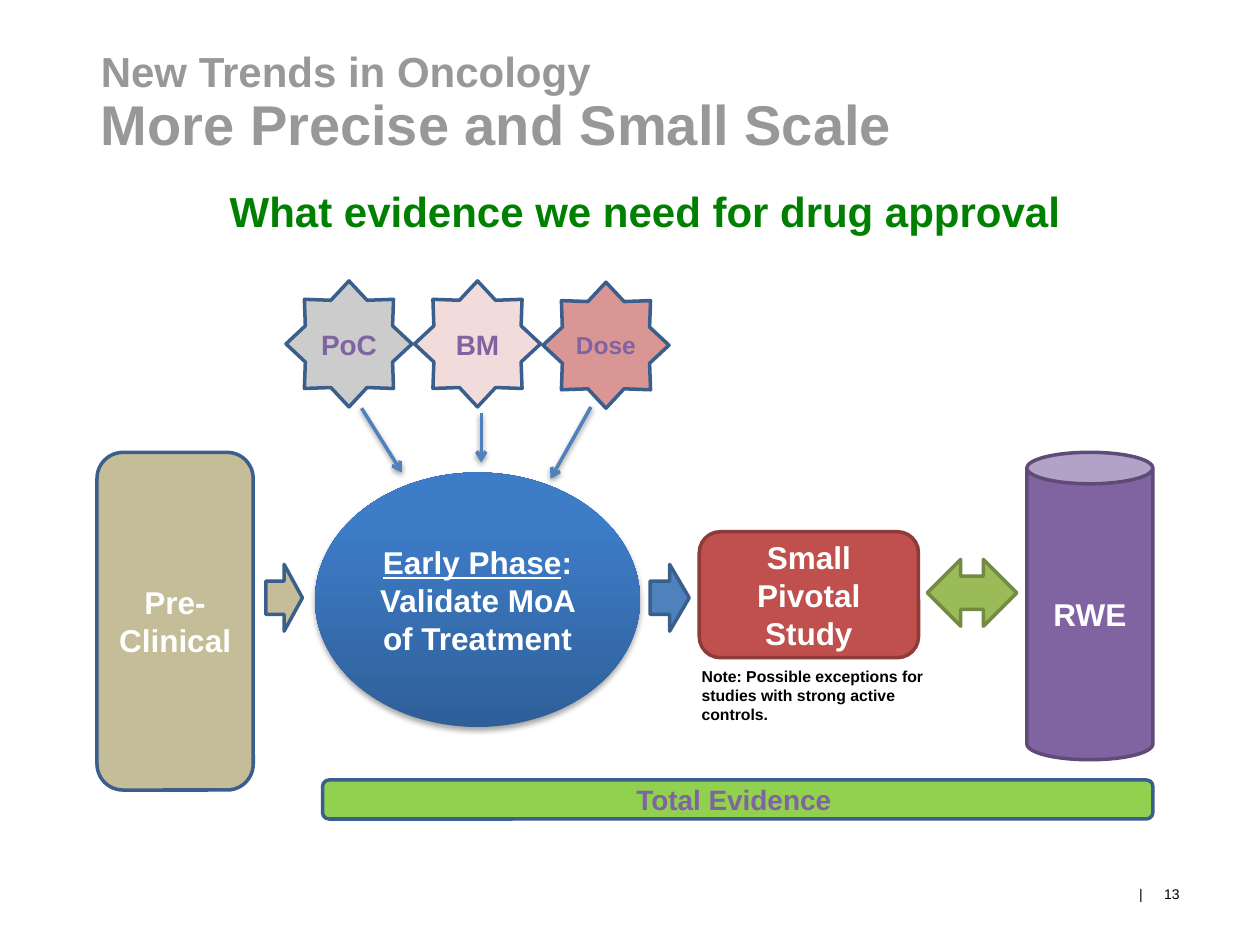
from lxml.etree import SubElement
from pptx import Presentation
from pptx.dml.color import RGBColor
from pptx.enum.shapes import MSO_CONNECTOR, MSO_SHAPE
from pptx.enum.text import MSO_ANCHOR, PP_ALIGN
from pptx.oxml.ns import qn
from pptx.util import Inches, Pt

NAVY = "3A5F8C"
PURPLE = "8064A2"
WHITE = "FFFFFF"
TAN = "C4BD97"
BLUE = "4F81BD"


def rgb(value):
    return RGBColor.from_string(value)


def set_font(font, size, color, bold=True):
    font.name = "Arial"
    font.size = Pt(size)
    font.bold = bold
    font.color.rgb = rgb(color)


def set_insets(tf, left=0.0):
    tf.margin_left = Inches(left)
    tf.margin_top = tf.margin_right = tf.margin_bottom = 0


def add_shadow(sp, alpha, dist):
    props = sp._element.spPr
    for old in props.findall(qn("a:effectLst")):
        props.remove(old)
    effects = SubElement(props, qn("a:effectLst"))
    shadow = SubElement(effects, qn("a:outerShdw"), blurRad=str(Pt(3.1)),
                        dist=str(Pt(dist)), dir="5400000", rotWithShape="0")
    color = SubElement(shadow, qn("a:srgbClr"), val="000000")
    SubElement(color, qn("a:alpha"), val=str(alpha * 1000))


def add_title(s):
    title = s.shapes.title
    title.left, title.top = Inches(0.7), Inches(0.36)
    title.width, title.height = Inches(9.18), Inches(0.87)
    tf = title.text_frame
    tf.vertical_anchor = MSO_ANCHOR.TOP
    p = tf.paragraphs[0]
    p.alignment = PP_ALIGN.LEFT
    p.line_spacing = 0.9
    r = p.add_run()
    r.text = "New Trends in Oncology"
    set_font(r.font, 24, "989898")
    p.add_line_break()
    r = p.add_run()
    r.text = "More Precise and Small Scale"
    set_font(r.font, 32, "989898")


def add_text(s, box, lines, size, color, bold=True, align=PP_ALIGN.LEFT, wrap=True):
    sp = s.shapes.add_textbox(*map(Inches, box))
    tf = sp.text_frame
    tf.word_wrap = wrap
    for i, line in enumerate(lines):
        p = tf.add_paragraph() if i else tf.paragraphs[0]
        p.text = line
        p.alignment = align
        set_font(p.font, size, color, bold)
    return tf


def add_page_number(s):
    tf = add_text(s, (8.84, 7.03, 0.53, 0.26), [""], 8, "000000", bold=False)
    set_insets(tf, 0.2)
    p = tf.paragraphs[0]
    p.text = "|\t13"
    tabs = SubElement(p._p.get_or_add_pPr(), qn("a:tabLst"))
    SubElement(tabs, qn("a:tab"), pos=str(Inches(0.2)), algn="l")
    set_font(p.font, 8, "000000", bold=False)


def add_shape(s, kind, box, fill=None, line=None, text="", size=18, color=WHITE):
    sp = s.shapes.add_shape(kind, *map(Inches, box))
    sp.shadow.inherit = False
    if fill:
        sp.fill.solid()
        sp.fill.fore_color.rgb = rgb(fill)
    if line:
        sp.line.color.rgb = rgb(line)
        sp.line.width = Pt(2)
    else:
        sp.line.fill.background()
    if text:
        tf = sp.text_frame
        tf.word_wrap = True
        tf.vertical_anchor = MSO_ANCHOR.MIDDLE
        p = tf.paragraphs[0]
        p.text = text
        p.alignment = PP_ALIGN.CENTER
        set_font(p.font, size, color)
    return sp


def add_early_phase(s):
    sp = add_shape(s, MSO_SHAPE.OVAL, (2.5, 3.75, 2.58, 2.02), text="Early Phase")
    sp.fill.gradient()
    sp.fill.gradient_angle = 90
    for stop, position, color in zip(sp.fill.gradient_stops, (0, 0.8), ("2F5F99", "3D7CC7")):
        stop.position = position
        stop.color.rgb = rgb(color)
    p = sp.text_frame.paragraphs[0]
    p.runs[0].font.underline = True
    r = p.add_run()
    r.text = ": Validate MoA of Treatment"
    add_shadow(sp, 35, 1.8)


def add_arrow(s, start, end):
    cn = s.shapes.add_connector(MSO_CONNECTOR.STRAIGHT, *map(Inches, start + end))
    cn.line.color.rgb = rgb(BLUE)
    cn.line.width = Pt(2)
    SubElement(cn.line._get_or_add_ln(), qn("a:tailEnd"), type="arrow")
    add_shadow(cn, 38, 1.6)


def main():
    prs = Presentation()
    prs.slide_width, prs.slide_height = Inches(10), Inches(7.5)
    s = prs.slides.add_slide(prs.slide_layouts[5])

    add_title(s)
    subtitle = add_text(s, (0.67, 1.47, 8.9, 0.47), ["What evidence we need for drug approval"],
                        24, "008000", align=PP_ALIGN.CENTER)
    set_insets(subtitle)
    add_page_number(s)

    add_early_phase(s)
    add_shape(s, MSO_SHAPE.RIGHT_ARROW, (5.16, 4.48, 0.31, 0.53), BLUE, NAVY)
    add_shape(s, MSO_SHAPE.ROUNDED_RECTANGLE, (5.55, 4.22, 1.74, 1), "C0504D", "8E3B39",
              "Small Pivotal Study")
    add_shape(s, MSO_SHAPE.CAN, (8.15, 3.59, 1, 2.44), PURPLE, "5F4A78", "RWE")
    add_shape(s, MSO_SHAPE.LEFT_RIGHT_ARROW, (7.36, 4.44, 0.71, 0.53), "9BBB59", "738A42")
    add_shape(s, MSO_SHAPE.ROUNDED_RECTANGLE, (0.77, 3.59, 1.24, 2.68), TAN, NAVY, "Pre-Clinical")
    add_shape(s, MSO_SHAPE.RIGHT_ARROW, (2.11, 4.48, 0.29, 0.53), TAN, NAVY)

    stars = (("PoC", 2.23, "CCCCCC", 16), ("BM", 2.23, "F2DCDB", 16), ("Dose", 2.24, "D99694", 14))
    for i, (text, top, fill, size) in enumerate(stars):
        add_shape(s, MSO_SHAPE.STAR_8_POINT, (2.27 + 1.02 * i, top, 1, 1),
                  fill, NAVY, text, size, PURPLE)

    for start, end in (((2.87, 3.24), (3.19, 3.75)),
                       ((3.82, 3.28), (3.82, 3.67)),
                       ((4.69, 3.23), (4.37, 3.8))):
        add_arrow(s, start, end)

    add_shape(s, MSO_SHAPE.ROUNDED_RECTANGLE, (2.56, 6.19, 6.59, 0.31), "92D050", NAVY,
              "Total Evidence ", 16, PURPLE)
    add_text(s, (5.47, 5.24, 2.01, 0.56),
             ["Note: Possible exceptions for", "studies with strong active", "controls."],
             9, "000000", wrap=False)

    prs.save("out.pptx")


if __name__ == "__main__":
    main()
